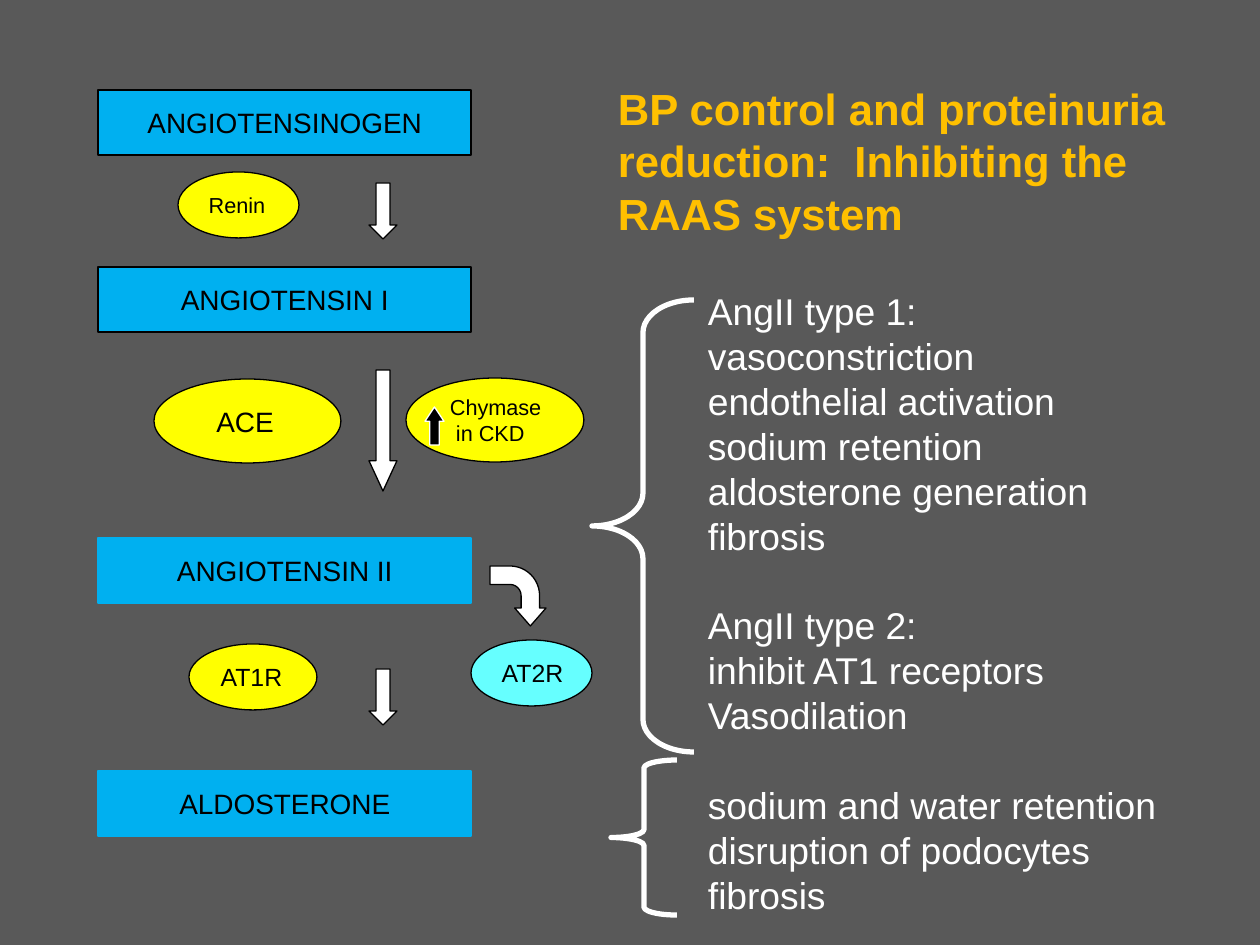
from pptx import Presentation
from pptx.dml.color import RGBColor
from pptx.enum.shapes import MSO_SHAPE
from pptx.enum.text import MSO_ANCHOR, PP_ALIGN
from pptx.util import Emu, Pt

RECT, OVAL = MSO_SHAPE.RECTANGLE, MSO_SHAPE.OVAL
DOWN, UP = MSO_SHAPE.DOWN_ARROW, MSO_SHAPE.UP_ARROW
BENT, BRACE = MSO_SHAPE.BENT_ARROW, MSO_SHAPE.LEFT_BRACE
TOP, MIDDLE = MSO_ANCHOR.TOP, MSO_ANCHOR.MIDDLE
LEFT, CENTER = PP_ALIGN.LEFT, PP_ALIGN.CENTER

GRAY = RGBColor(0x59, 0x59, 0x59)
BLUE = RGBColor(0x00, 0xB0, 0xF0)
YELLOW = RGBColor(0xFF, 0xFF, 0x00)
CYAN = RGBColor(0x66, 0xFF, 0xFF)
GOLD = RGBColor(0xFF, 0xC0, 0x00)
BLACK = RGBColor(0x00, 0x00, 0x00)
WHITE = RGBColor(0xFF, 0xFF, 0xFF)

TITLE = "BP control and proteinuria reduction:  Inhibiting the RAAS system"
STEPS = [
    ("ANGIOTENSINOGEN", 90, BLACK),
    ("ANGIOTENSIN I", 267, BLACK),
    ("ANGIOTENSIN II", 538, BLUE),
    ("ALDOSTERONE", 771, BLUE),
]
ARROWS = [(183, 56, 0.5), (370, 121, 1.08), (669, 56, 0.5)]
OVALS = [
    (["Renin"], (178, 172, 121, 66), YELLOW, 12.4, 13),
    (["ACE"], (154, 379, 187, 84), YELLOW, 16, 35),
    (["AT1R"], (189, 644, 128, 66), YELLOW, 14.2, 13),
    (["Chymase", " in CKD"], (406, 378, 178, 84), YELLOW, 12.4, 18),
    (["AT2R"], (471, 640, 121, 66), CYAN, 14.2, 13),
]
BRACES = [((592, 300, 102, 452), 0.32), ((611, 760, 66, 155), 0.12)]
EFFECTS = [
    ["AngII type 1:", "vasoconstriction", "endothelial activation",
     "sodium retention", "aldosterone generation", "fibrosis"],
    ["AngII type 2:", "inhibit AT1 receptors", "Vasodilation"],
    ["sodium and water retention", "disruption of podocytes", "fibrosis"],
]


def px(num):
    """Turn pixels into EMU."""
    return Emu(round(num * 914400 / 126))


def place(item, box):
    """Move and size an item."""
    item.left, item.top, item.width, item.height = map(px, box)


def write(item, groups, size, color=BLACK, bold=False, align=LEFT,
          anchor=MIDDLE, wrap=False, inset=13, pitch=None):
    """Write groups of lines, with one line's gap between groups."""
    frame = item.text_frame
    frame.word_wrap = wrap
    frame.vertical_anchor = anchor
    frame.margin_left = px(inset)
    lines = [(text, row == 0 and rank > 0)
             for rank, group in enumerate(groups)
             for row, text in enumerate(group)]
    for num, (text, gap) in enumerate(lines):
        para = frame.add_paragraph() if num else frame.paragraphs[0]
        para.alignment = align
        para.space_before = Pt(pitch if gap else 0)
        if pitch:
            para.line_spacing = Pt(pitch)
        run = para.add_run()
        run.text = text
        font = run.font
        font.name, font.size, font.bold = "Arial", Pt(size), bold
        font.color.rgb = color


def draw(slide, kind, box, fill=None, line=BLACK, width=0.75, adjust=()):
    """Add a preset shape."""
    shape = slide.shapes.add_shape(kind, *map(px, box))
    shape.shadow.inherit = False
    if fill is None:
        shape.fill.background()
    else:
        shape.fill.solid()
        shape.fill.fore_color.rgb = fill
    shape.line.color.rgb = line
    shape.line.width = Pt(width)
    for num, value in enumerate(adjust):
        shape.adjustments[num] = value
    return shape


def chain(slide):
    """Draw the steps with their arrows and ovals."""
    for text, top, line in STEPS:
        shape = draw(slide, RECT, (98, top, 373, 65), BLUE, line)
        write(shape, [[text]], 16, align=CENTER)
    for top, height, head in ARROWS:
        draw(slide, DOWN, (369, top, 28, height), WHITE, adjust=(0.5, head))
    for lines, box, fill, size, inset in OVALS:
        write(draw(slide, OVAL, box, fill), [lines], size, inset=inset,
              pitch=14.8 if len(lines) > 1 else None)
    bend = draw(slide, BENT, (488, 568, 60, 56), WHITE,
                adjust=(0.33, 0.28, 0.32, 0.53))
    bend.rotation = 90
    draw(slide, UP, (425, 407, 19, 38), BLACK, WHITE, adjust=(0.5, 0.75))


def effects(slide):
    """Draw the braces and the list of effects."""
    for box, curve in BRACES:
        draw(slide, BRACE, box, line=WHITE, width=3, adjust=(curve, 0.5))
    text = slide.shapes.add_textbox(*map(px, (695, 282, 490, 642)))
    write(text, EFFECTS, 21.3, WHITE, anchor=TOP, pitch=25.65)


def main():
    """Build the slide and save it."""
    deck = Presentation()
    deck.slide_width, deck.slide_height = px(1260), px(945)
    slide = deck.slides.add_slide(deck.slide_layouts[5])
    slide.background.fill.solid()
    slide.background.fill.fore_color.rgb = GRAY
    title = slide.shapes.title
    place(title, (605, 75, 612, 171))
    write(title, [[TITLE]], 24.9, GOLD, bold=True, anchor=TOP, wrap=True,
          pitch=30)
    chain(slide)
    effects(slide)
    deck.save("out.pptx")


if __name__ == "__main__":
    main()
